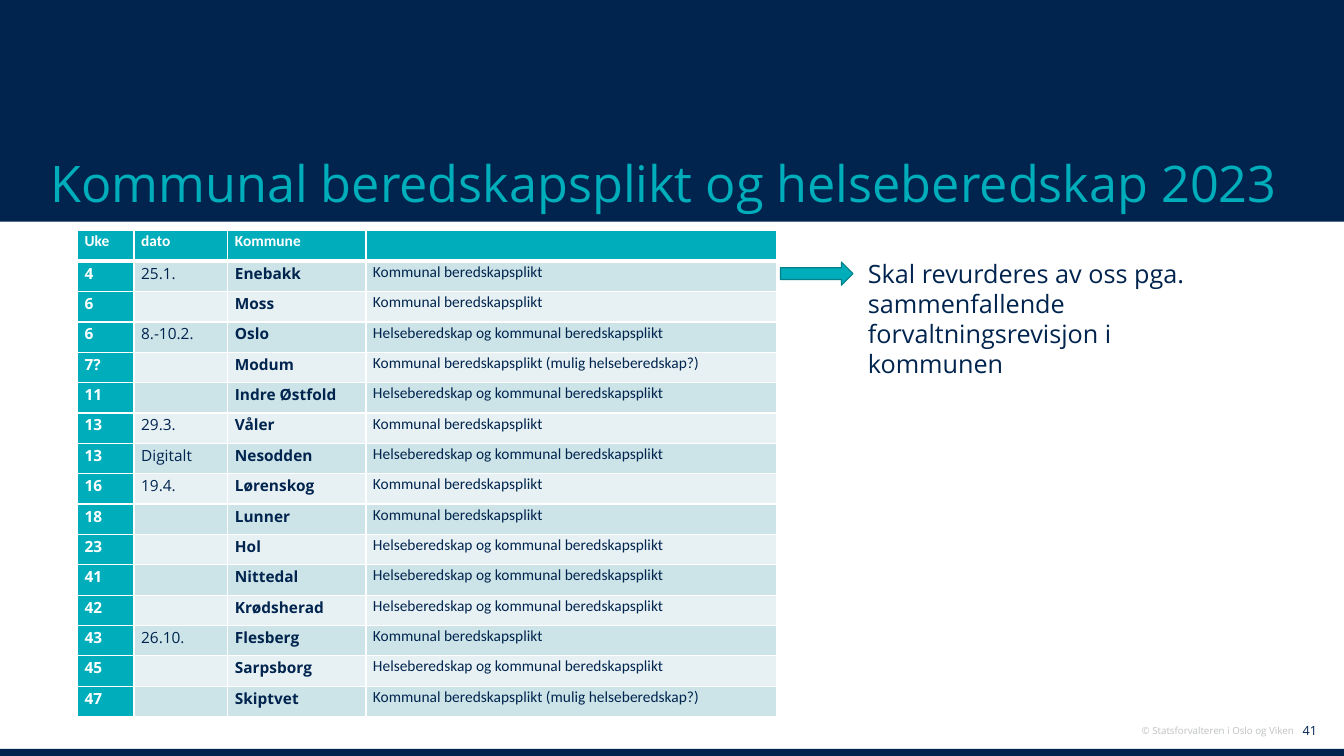
from dataclasses import dataclass
from lxml.etree import SubElement
from pptx import Presentation
from pptx.dml.color import RGBColor
from pptx.enum.shapes import MSO_SHAPE
from pptx.enum.text import MSO_ANCHOR, PP_ALIGN
from pptx.oxml.ns import qn
from pptx.util import Inches, Pt


@dataclass(frozen=True)
class Theme:
    navy: str = "00244E"
    teal: str = "00ADBA"
    edge: str = "00808A"
    white: str = "FFFFFF"
    grey: str = "BFC2C0"
    bands: tuple = ("CCE3E7", "E7F1F3")
    sans: str = "Open Sans"
    plain: str = "Calibri"
    title: int = 36
    note: int = 18
    cell: int = 11
    page: int = 9
    foot: int = 7


THEME = Theme()

WIDTHS = (0.56, 0.93, 1.37, 4.07)
HEAD = ("Uke", "dato", "Kommune", "")
DUTY = "Kommunal beredskapsplikt"
HEALTH = "Helseberedskap og kommunal beredskapsplikt"
MAYBE = DUTY + " (mulig helseberedskap?)"
VISITS = (
    ("4", "25.1.", "Enebakk", DUTY),
    ("6", "", "Moss", DUTY),
    ("6", "8.-10.2.", "Oslo", HEALTH),
    ("7?", "", "Modum", MAYBE),
    ("11", "", "Indre Østfold", HEALTH),
    ("13", "29.3.", "Våler", DUTY),
    ("13", "Digitalt", "Nesodden", HEALTH),
    ("16", "19.4.", "Lørenskog", DUTY),
    ("18", "", "Lunner", DUTY),
    ("23", "", "Hol", HEALTH),
    ("41", "", "Nittedal", HEALTH),
    ("42", "", "Krødsherad", HEALTH),
    ("43", "26.10.", "Flesberg", DUTY),
    ("45", "", "Sarpsborg", HEALTH),
    ("47", "", "Skiptvet", MAYBE),
)


def apply(item, form):
    for name, value in form.items():
        setattr(item, name, value)


def paint(fill, color):
    fill.solid()
    fill.fore_color.rgb = RGBColor.from_string(color)


def write(para, text, size, color, face=THEME.sans, bold=False):
    run = para.add_run()
    run.text = text
    apply(run.font, {"size": Pt(size), "name": face, "bold": bold})
    run.font.color.rgb = RGBColor.from_string(color)


def add_form(slide, kind, box, color, edge=None):
    shape = slide.shapes.add_shape(kind, *map(Inches, box))
    shape.shadow.inherit = False
    paint(shape.fill, color)
    if edge:
        paint(shape.line.fill, edge)
        shape.line.width = Pt(0.85)
    else:
        shape.line.fill.background()


def add_text(slide, box, text, size, color,
             align=PP_ALIGN.LEFT, anchor=MSO_ANCHOR.TOP):
    frame = slide.shapes.add_textbox(*map(Inches, box)).text_frame
    apply(frame, {"word_wrap": True, "vertical_anchor": anchor})
    para = frame.paragraphs[0]
    para.alignment = align
    write(para, text, size, color)


def add_edges(cell, base):
    props = cell._tc.get_or_add_tcPr()
    for side, width in (("L", 1), ("R", 1), ("T", 1), ("B", base)):
        line = SubElement(props, qn(f"a:ln{side}"), w=str(Pt(width)))
        fill = SubElement(line, qn("a:solidFill"))
        SubElement(fill, qn("a:srgbClr"), val=THEME.white)


def fill_cell(cell, text, row, col):
    head = row == 0
    key = head or col == 0
    apply(cell, {"margin_left": Inches(0.07), "margin_right": Inches(0.07),
                 "margin_top": 0, "margin_bottom": 0})
    add_edges(cell, 3 if head else 1)
    paint(cell.fill, THEME.teal if key else THEME.bands[(row - 1) % 2])
    para = cell.text_frame.paragraphs[0]
    apply(para, {"line_spacing": 1.07, "space_after": Pt(8)})
    if text:
        write(para, text, THEME.cell, THEME.white if key else THEME.navy,
              THEME.plain if head or col == 3 else THEME.sans,
              key or col == 2)
    else:
        # Keeps an empty cell from stretching its row
        SubElement(para._p, qn("a:endParaRPr"), sz=str(THEME.cell * 100))


def add_plan(slide):
    rows = (HEAD, *VISITS)
    box = map(Inches, (0.77, 2.29, sum(WIDTHS), 4.82))
    table = slide.shapes.add_table(len(rows), len(HEAD), *box).table
    table.first_col = True
    for col, width in zip(table.columns, WIDTHS):
        col.width = Inches(width)
    for i, texts in enumerate(rows):
        for j, text in enumerate(texts):
            fill_cell(table.cell(i, j), text, i, j)


def main():
    deck = Presentation()
    apply(deck, {"slide_width": Inches(13.33), "slide_height": Inches(7.5)})
    slide = deck.slides.add_slide(deck.slide_layouts[6])

    # Bands and footer
    add_form(slide, MSO_SHAPE.RECTANGLE, (0, 7.43, 13.33, 0.07), THEME.navy)
    add_form(slide, MSO_SHAPE.RECTANGLE, (0, 0, 13.33, 2.2), THEME.navy)
    add_text(slide, (12.62, 7.12, 0.54, 0.26), "41", THEME.page, THEME.navy,
             PP_ALIGN.RIGHT, MSO_ANCHOR.MIDDLE)
    add_text(slide, (10.85, 7.14, 2.08, 0.22),
             "© Statsforvalteren i Oslo og Viken", THEME.foot, THEME.grey,
             PP_ALIGN.RIGHT)

    # Title
    add_text(slide, (0.4, 0.98, 12.53, 1.18),
             "Kommunal beredskapsplikt og helseberedskap 2023",
             THEME.title, THEME.teal, anchor=MSO_ANCHOR.BOTTOM)

    # Plan of visits
    add_plan(slide)

    # Remark on the first visit
    add_form(slide, MSO_SHAPE.RIGHT_ARROW, (7.74, 2.6, 0.72, 0.23),
             THEME.teal, THEME.edge)
    add_text(slide, (8.51, 2.51, 3.86, 1.31),
             "Skal revurderes av oss pga. sammenfallende "
             "forvaltningsrevisjon i kommunen", THEME.note, THEME.navy)

    deck.save("out.pptx")


if __name__ == "__main__":
    main()
